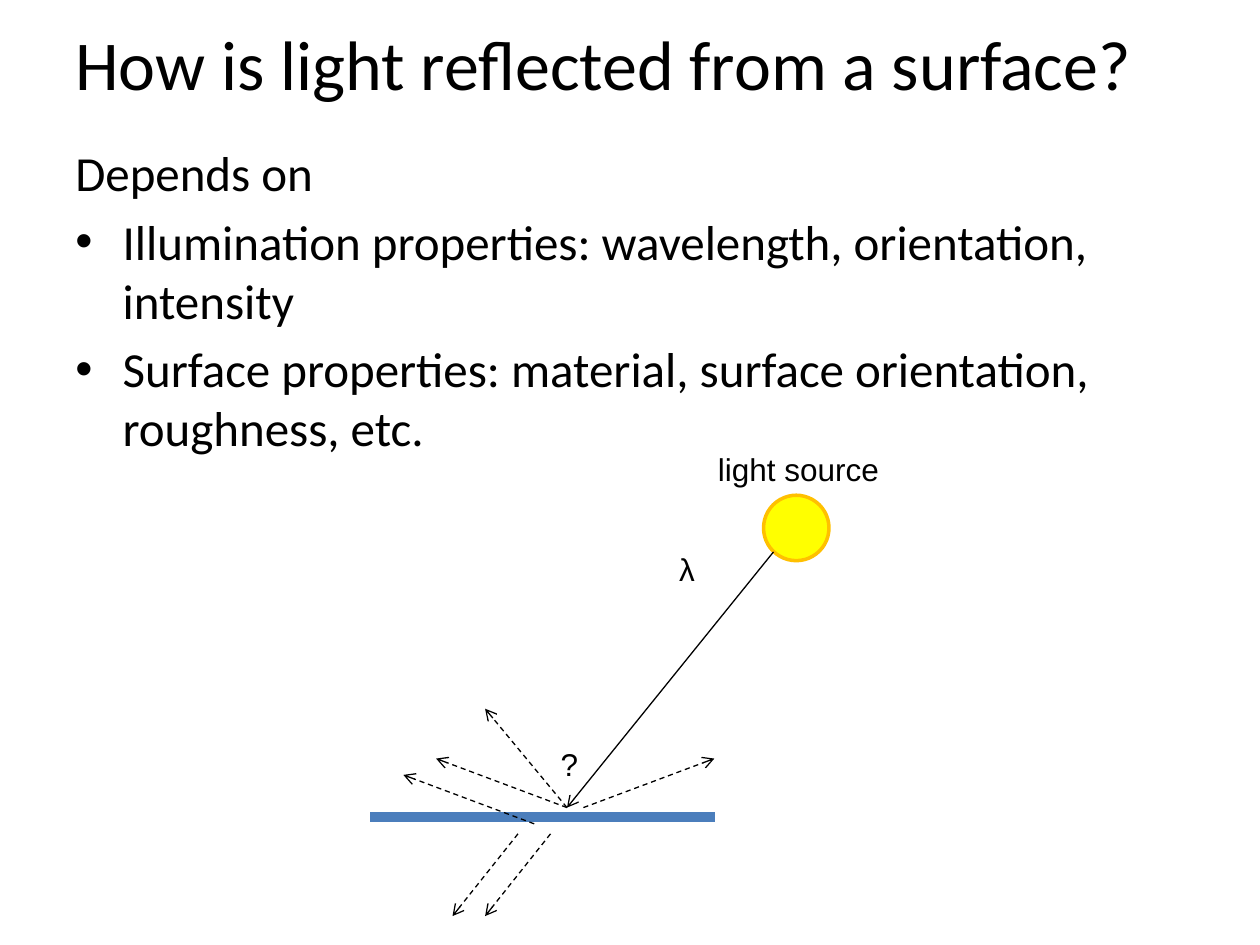
"""Build a slide on how light is reflected from a surface."""
from pptx import Presentation
from pptx import util as u
from pptx.dml.color import RGBColor
from pptx.enum import dml, shapes, text
from pptx.oxml import ns
from lxml import etree

BLACK = RGBColor(0x00, 0x00, 0x00)
BLUE = RGBColor(0x4B, 0x7E, 0xBC)
YELLOW = RGBColor(0xFF, 0xFF, 0x00)
AMBER = RGBColor(0xFF, 0xC0, 0x00)

prs = Presentation()
prs.slide_width, prs.slide_height = u.Pt(720), u.Pt(540)
s = prs.slides.add_slide(prs.slide_layouts[6])


def add_text(lines, box, size=18, font="Arial", anchor=text.MSO_ANCHOR.TOP,
             before=0, bullets_from=None):
    tf = s.shapes.add_textbox(*map(u.Pt, box)).text_frame
    tf.word_wrap = True
    tf.vertical_anchor = anchor
    for i, line in enumerate(lines):
        p = tf.paragraphs[0] if i == 0 else tf.add_paragraph()
        p.space_before = u.Pt(before)
        r = p.add_run()
        r.text = line
        r.font.size, r.font.name = u.Pt(size), font
        r.font.color.rgb = BLACK
        if bullets_from is not None and i >= bullets_from:
            pPr = p._p.get_or_add_pPr()
            pPr.set("marL", str(u.Pt(27)))
            pPr.set("indent", str(u.Pt(-27)))
            etree.SubElement(pPr, ns.qn("a:buFont"), typeface="Arial")
            etree.SubElement(pPr, ns.qn("a:buChar"), char="•")


def add_line(start, end, color=BLACK, width=0.75, dash=None, arrow=True):
    sp = s.shapes.add_connector(shapes.MSO_CONNECTOR.STRAIGHT, *map(u.Pt, start + end))
    sp.line.color.rgb = color
    sp.line.width = u.Pt(width)
    if dash:
        sp.line.dash_style = dash
    spPr = sp._element.spPr
    if arrow:
        etree.SubElement(spPr.find(ns.qn("a:ln")), ns.qn("a:tailEnd"), type="arrow")
    etree.SubElement(spPr, ns.qn("a:effectLst"))


add_text(["How is light reflected from a surface?"], (36, 0, 648, 72),
         size=40, font="Calibri", anchor=text.MSO_ANCHOR.MIDDLE)
add_text(["Depends on",
          "Illumination properties: wavelength, orientation, intensity",
          "Surface properties: material, surface orientation, roughness, etc."],
         (36, 78, 648, 405), size=28, font="Calibri", before=5.6, bullets_from=1)

add_line((211.5, 467), (408.5, 467), color=BLUE, width=6, arrow=False)

sun = s.shapes.add_shape(shapes.MSO_SHAPE.OVAL, *map(u.Pt, (436.3, 283, 37.4, 37.4)))
sun.shadow.inherit = False
sun.fill.solid()
sun.fill.fore_color.rgb = YELLOW
sun.line.color.rgb = AMBER
sun.line.width = u.Pt(2)

hit = (324, 461.5)
add_line((442, 315.4), hit)

for label, box in [("λ", (381, 311, 37, 45)),
                   ("light source", (403.2, 253.5, 108, 30)),
                   ("?", (313.2, 422, 26, 29))]:
    add_text([label], box)

for (x, y), (dx, dy) in [(hit, (-46.8, -56.5)),
                         (hit, (-74.8, -28)),
                         ((333.4, 461.5), (74.8, -28)),
                         ((314.6, 476.5), (-37.4, 47)),
                         ((296, 476.5), (-37.4, 47)),
                         ((305.3, 470.8), (-74.8, -28))]:
    add_line((x, y), (x + dx, y + dy), dash=dml.MSO_LINE.DASH)

prs.save("out.pptx")
